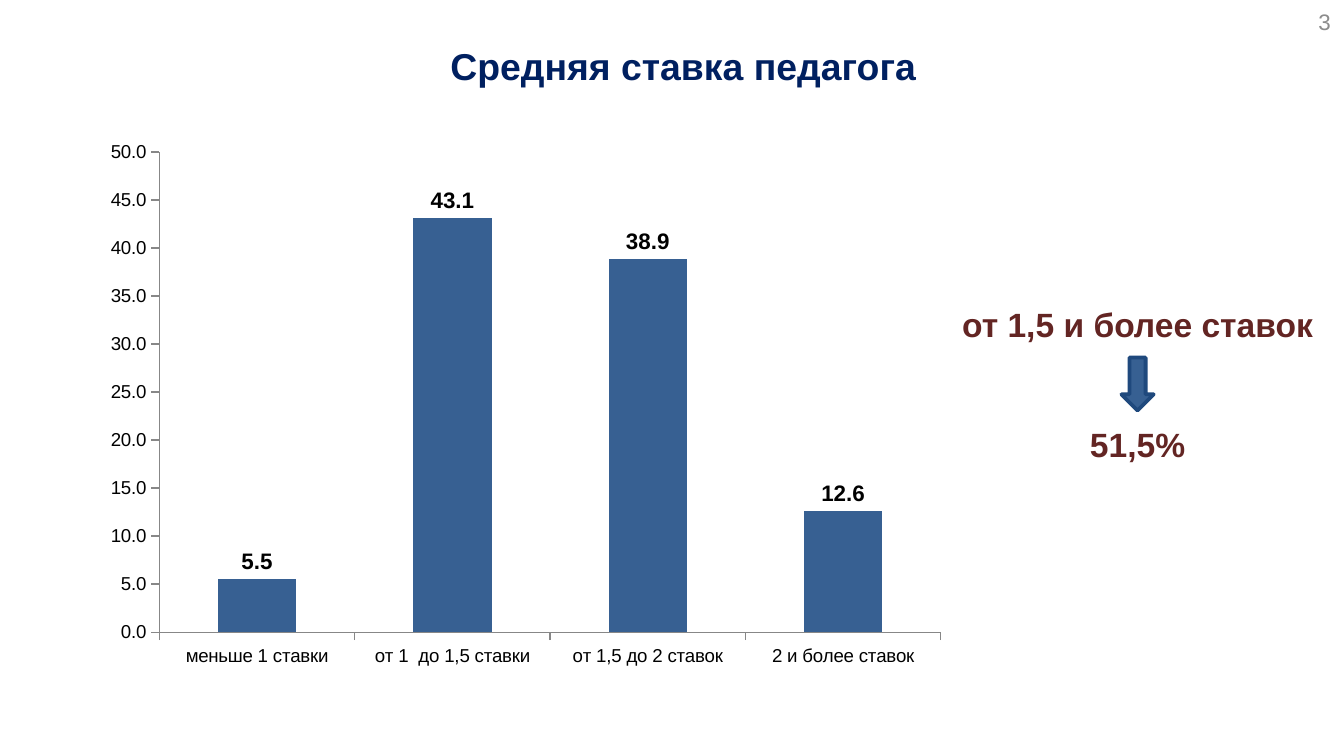
from lxml import etree
from pptx import Presentation
from pptx.chart.data import CategoryChartData
from pptx.dml.color import RGBColor
from pptx.enum.chart import XL_CHART_TYPE, XL_LABEL_POSITION, XL_TICK_MARK
from pptx.enum.shapes import MSO_SHAPE
from pptx.enum.text import MSO_ANCHOR, PP_ALIGN
from pptx.oxml.ns import qn
from pptx.util import Cm, Pt

COLUMNS = XL_CHART_TYPE.COLUMN_CLUSTERED
LABEL_OUTSIDE = XL_LABEL_POSITION.OUTSIDE_END
TICK_OUT = XL_TICK_MARK.OUTSIDE
TICK_NONE = XL_TICK_MARK.NONE
ROUNDED = MSO_SHAPE.ROUNDED_RECTANGLE
DOWN_ARROW = MSO_SHAPE.DOWN_ARROW
MIDDLE = MSO_ANCHOR.MIDDLE
CENTER = PP_ALIGN.CENTER
RIGHT = PP_ALIGN.RIGHT

FONT = "Arial"
NAVY, MAROON, GRAY, BLACK = "002060", "632523", "8C8C8C", "000000"
BLUE, DARK_BLUE, AXIS_GRAY = "376092", "1F497D", "878787"

RATES = {
    "меньше 1 ставки": 5.5,
    "от 1  до 1,5 ставки": 43.1,
    "от 1,5 до 2 ставок": 38.9,
    "2 и более ставок": 12.6,
}


def rgb(value):
    return RGBColor.from_string(value)


def set_font(font, size, color, bold=False):
    font.name = FONT
    font.size = Pt(size)
    font.bold = bold
    font.color.rgb = rgb(color)


def write(tf, text, size=18, color=BLACK, bold=False, align=CENTER, gap=0):
    tf.word_wrap = True
    tf.vertical_anchor = MIDDLE
    for i, line in enumerate(text.split("\n")):
        p = tf.paragraphs[0] if i == 0 else tf.add_paragraph()
        p.alignment = align
        if i:
            p.space_before = Pt(gap)
        r = p.add_run()
        r.text = line
        set_font(r.font, size, color, bold)


def place_title(s, box):
    title = s.shapes.title
    title.left, title.top, title.width, title.height = box
    write(title.text_frame, "Средняя ставка педагога", size=20, color=NAVY, bold=True)


def add_page_number(s, box):
    sp = s.shapes.add_textbox(*box)
    write(sp.text_frame, "3", size=12, color=GRAY, align=RIGHT)


def set_plot_layout(chart, **fractions):
    plot_area = chart.plots[0]._element.getparent()
    for old in plot_area.findall(qn("c:layout")):
        plot_area.remove(old)
    layout = etree.Element(qn("c:layout"))
    plot_area.insert(0, layout)
    manual = etree.SubElement(layout, qn("c:manualLayout"))
    settings = {"layoutTarget": "inner", "xMode": "edge", "yMode": "edge", **fractions}
    for name, value in settings.items():
        etree.SubElement(manual, qn(f"c:{name}")).set("val", str(value))


def add_rate_chart(s, box):
    data = CategoryChartData(number_format="0.0")
    data.categories = list(RATES)
    data.add_series("Series 1", list(RATES.values()))
    chart = s.shapes.add_chart(COLUMNS, *box, data).chart
    chart.has_legend = False
    chart.has_title = False
    set_font(chart.font, 10, BLACK)
    set_plot_layout(chart, x=0.08, y=0.04, w=0.9, h=0.88)

    for axis in (chart.category_axis, chart.value_axis):
        axis.has_major_gridlines = False
        axis.major_tick_mark = TICK_OUT
        axis.minor_tick_mark = TICK_NONE
        axis.format.line.color.rgb = rgb(AXIS_GRAY)
    values = chart.value_axis
    values.minimum_scale, values.maximum_scale, values.major_unit = 0, 50, 5
    values.tick_labels.number_format = "0.0"
    values.tick_labels.number_format_is_linked = False

    plot = chart.plots[0]
    plot.gap_width = 150
    plot.vary_by_categories = False
    fill = plot.series[0].format.fill
    fill.solid()
    fill.fore_color.rgb = rgb(BLUE)
    plot.has_data_labels = True
    labels = plot.data_labels
    labels.show_value = True
    labels.position = LABEL_OUTSIDE
    labels.number_format = "0.0"
    labels.number_format_is_linked = False
    set_font(labels.font, 12, BLACK, bold=True)


def add_summary(s, box):
    left, top, width, height = box
    sp = s.shapes.add_shape(ROUNDED, *box)
    sp.shadow.inherit = False
    sp.fill.background()
    sp.line.fill.background()
    write(sp.text_frame, "от 1,5 и более ставок\n51,5%", color=MAROON, bold=True, gap=43)

    arrow_w, arrow_h = Cm(0.61), Cm(1)
    arrow = s.shapes.add_shape(
        DOWN_ARROW,
        left + (width - arrow_w) // 2,
        top + (height - arrow_h) // 2,
        arrow_w,
        arrow_h,
    )
    arrow.shadow.inherit = False
    arrow.fill.solid()
    arrow.fill.fore_color.rgb = rgb(BLUE)
    arrow.line.color.rgb = rgb(DARK_BLUE)
    arrow.line.width = Pt(2)


def main():
    prs = Presentation()
    prs.slide_width, prs.slide_height = Cm(25.4), Cm(14.28)
    s = prs.slides.add_slide(prs.slide_layouts[5])
    place_title(s, (Cm(1.7), Cm(0.05), Cm(22.43), Cm(2.39)))
    add_page_number(s, (Cm(19.48), Cm(0.03), Cm(5.92), Cm(0.76)))
    add_rate_chart(s, (Cm(1.7), Cm(2.46), Cm(16.41), Cm(10.31)))
    add_summary(s, (Cm(17.6), Cm(4.55), Cm(7.8), Cm(5.41)))
    prs.save("out.pptx")


if __name__ == "__main__":
    main()
